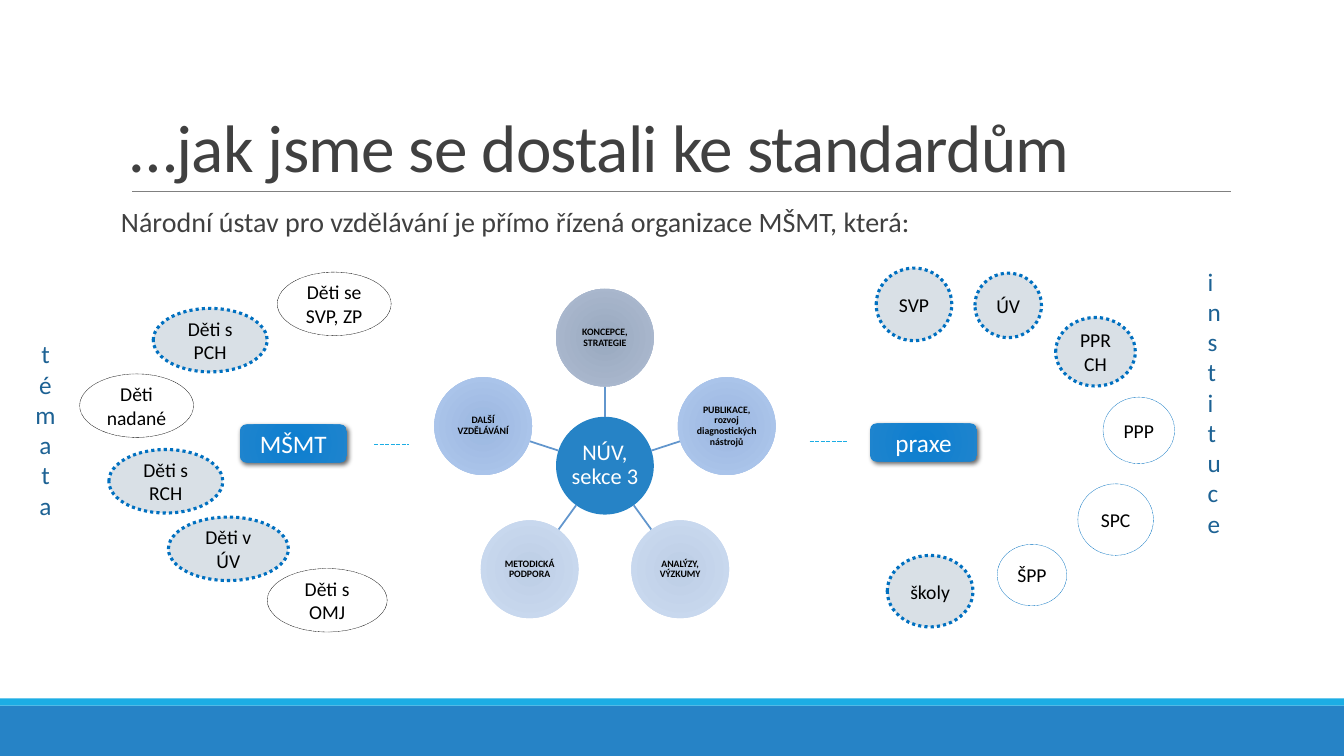
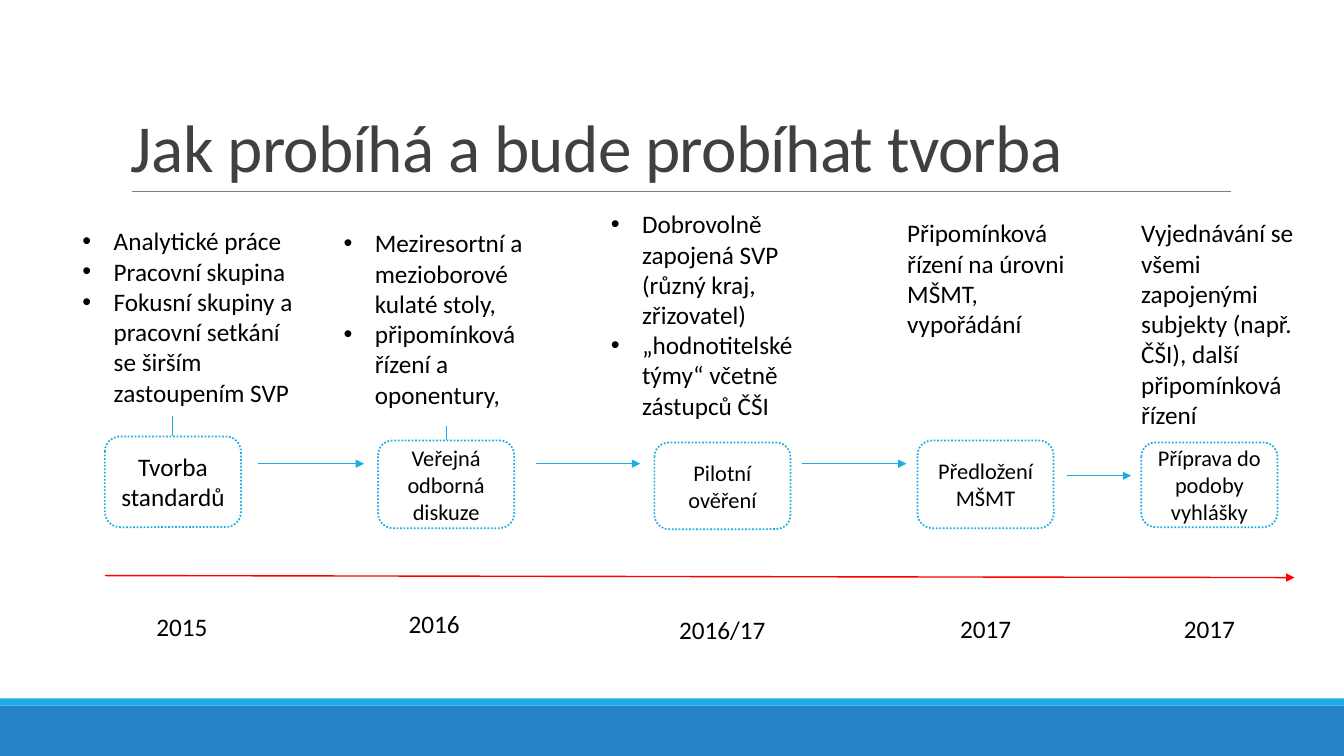
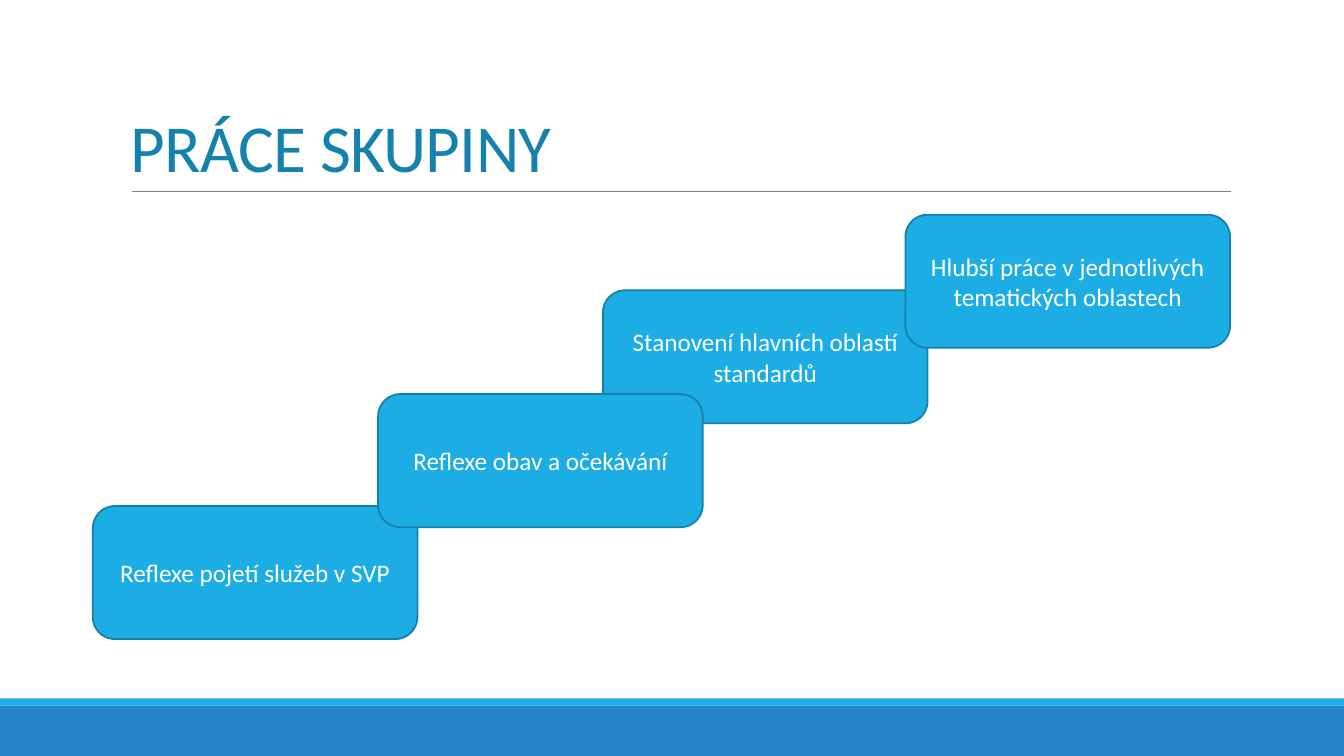
import math

from lxml import etree
from pptx import Presentation
from pptx import util as u
from pptx.dml.color import RGBColor
from pptx.enum import dml, shapes, text
from pptx.oxml.ns import qn

COLORS = {
    "white": "FFFFFF", "black": "000000", "title": "404040", "teal": "1482AC",
    "band": "2683C6", "sky": "1CADE4", "sky_edge": "1580A9", "rule": "808080",
    "blue": "0070C0", "mist": "D9E0E6", "spoke": "6296CD", "side": "1D6294",
    "red": "FF0000", "plate_in": "0D7ECF", "plate_out": "1E84CE",
    "steel_in": "98A8BF", "steel_out": "B0BDD2", "mid_in": "9BB7E0",
    "mid_out": "B1C9EE", "pale_in": "BDCEE5", "pale_out": "CDDCF2",
}
FONT = "Calibri"
OVAL = shapes.MSO_SHAPE.OVAL
ROUNDED = shapes.MSO_SHAPE.ROUNDED_RECTANGLE
RECTANGLE = shapes.MSO_SHAPE.RECTANGLE
TOP, MIDDLE, BOTTOM = text.MSO_ANCHOR.TOP, text.MSO_ANCHOR.MIDDLE, text.MSO_ANCHOR.BOTTOM
LEFT, CENTER = text.PP_ALIGN.LEFT, text.PP_ALIGN.CENTER
DOTS, DASHES = dml.MSO_LINE.ROUND_DOT, dml.MSO_LINE.SQUARE_DOT


def add_box(slide, preset, at, lines=(), size=18, color="black", fill=None,
            line=None, width=1.25, dash=None, align=CENTER, anchor=MIDDLE,
            margins=(0.1, 0.05), spacing=None, bold=False, bullet=False, wrap=True):
    """Add a preset shape, or a text box when preset is None.

    fill is a colour name, or a pair of names for a circular gradient.
    """
    box = [u.Inches(value) for value in at]
    if preset is None:
        shape = slide.shapes.add_textbox(*box)
    else:
        shape = slide.shapes.add_shape(preset, *box)
        shape.shadow.inherit = False
        if isinstance(fill, tuple):
            shape.fill.gradient()
            for stop, name in zip(shape.fill.gradient_stops, fill):
                stop.color.rgb = RGBColor.from_string(COLORS[name])
            gradient = shape._element.spPr.find(qn("a:gradFill"))
            gradient.remove(gradient.find(qn("a:lin")))
            circle = etree.SubElement(gradient, qn("a:path"), path="circle")
            etree.SubElement(circle, qn("a:fillToRect"),
                             l="100000", t="100000", r="100000", b="100000")
        else:
            shape.fill.solid()
            shape.fill.fore_color.rgb = RGBColor.from_string(COLORS[fill])
        if line:
            shape.line.color.rgb = RGBColor.from_string(COLORS[line])
            shape.line.width = u.Pt(width)
            if dash:
                shape.line.dash_style = dash
        else:
            shape.line.fill.background()
    frame = shape.text_frame
    frame.word_wrap = wrap
    frame.vertical_anchor = anchor
    frame.margin_left = frame.margin_right = u.Inches(margins[0])
    frame.margin_top = frame.margin_bottom = u.Inches(margins[1])
    for index, content in enumerate(lines):
        paragraph = frame.add_paragraph() if index else frame.paragraphs[0]
        paragraph.alignment = align
        if spacing:
            paragraph.line_spacing = spacing
        if bullet:
            properties = paragraph._p.get_or_add_pPr()
            properties.set("marL", str(u.Inches(0.31)))
            properties.set("indent", str(-u.Inches(0.31)))
            etree.SubElement(properties, qn("a:buFont"), typeface="Arial")
            etree.SubElement(properties, qn("a:buChar"), char="•")
        run = paragraph.add_run()
        run.text = content
        run.font.name = FONT
        run.font.size = u.Pt(size)
        run.font.bold = bold
        run.font.color.rgb = RGBColor.from_string(COLORS[color])
    return shape


def add_line(slide, start, end, color="sky", width=1, dash=None, arrow=False):
    points = [u.Inches(value) for value in (*start, *end)]
    connector = slide.shapes.add_connector(shapes.MSO_CONNECTOR.STRAIGHT, *points)
    connector.line.color.rgb = RGBColor.from_string(COLORS[color])
    connector.line.width = u.Pt(width)
    if dash:
        connector.line.dash_style = dash
    if arrow:
        etree.SubElement(connector.line._get_or_add_ln(), qn("a:tailEnd"), type="triangle")
    etree.SubElement(connector._element.spPr, qn("a:effectLst"))


presentation = Presentation()
presentation.slide_width = u.Inches(13.33)
presentation.slide_height = u.Inches(7.5)

# Shared bands, rule and title
slides = []
for title, color in [
    ("…jak jsme se dostali ke standardům", "title"),
    ("Jak probíhá a bude probíhat tvorba", "title"),
    ("PRÁCE SKUPINY", "teal"),
]:
    slide = presentation.slides.add_slide(presentation.slide_layouts[6])
    add_box(slide, RECTANGLE, (0, 7, 13.33, 0.5), fill="band")
    add_box(slide, RECTANGLE, (0, 6.93, 13.33, 0.07), fill="sky")
    add_line(slide, (1.31, 1.9), (12.21, 1.9), "rule", 0.5)
    heading = add_box(slide, None, (1.2, 0.31, 11, 1.59), [title], 48, color,
                      align=LEFT, anchor=BOTTOM, spacing=0.85)
    heading.text_frame.paragraphs[0].runs[0].font._element.set("spc", "-50")
    slides.append(slide)
network, timeline, stairs = slides

# Slide 1: hub with five activities, topics and institutions around it
add_box(network, None, (1.2, 2.02, 11, 0.5),
        ["Národní ústav pro vzdělávání je přímo řízená organizace MŠMT, která:"],
        20, "title", align=LEFT, anchor=TOP, margins=(0, 0.05), spacing=0.9)

HUB_X, HUB_Y, DIAMETER, ORBIT = 6, 4.62, 0.97, 1.27
activities = [
    ("KONCEPCE, STRATEGIE", "steel"),
    ("PUBLIKACE, rozvoj diagnostických nástrojů", "mid"),
    ("ANALÝZY, VÝZKUMY", "pale"),
    ("METODICKÁ PODPORA", "pale"),
    ("DALŠÍ VZDĚLÁVÁNÍ", "mid"),
]
add_box(network, OVAL, (HUB_X - DIAMETER / 2, HUB_Y - DIAMETER / 2, DIAMETER, DIAMETER),
        ["NÚV, sekce 3"], 16, "white", "band", margins=(0.01, 0.01), spacing=0.9)
for index, (label, tone) in enumerate(activities):
    angle = math.tau * index / len(activities)
    across, down = math.sin(angle), -math.cos(angle)
    near, far = DIAMETER / 2, ORBIT - DIAMETER / 2
    add_line(network, (HUB_X + near * across, HUB_Y + near * down),
             (HUB_X + far * across, HUB_Y + far * down), "spoke", 1.25)
    add_box(network, OVAL,
            (HUB_X + ORBIT * across - near, HUB_Y + ORBIT * down - near, DIAMETER, DIAMETER),
            [label], 7, fill=(tone + "_in", tone + "_out"), margins=(0, 0),
            spacing=0.9, bold=True)

for label, left, top in [("MŠMT", 2.38, 4.21), ("praxe", 8.63, 4.2)]:
    plate = add_box(network, ROUNDED, (left, top, 1.06, 0.38), [label], 18, "white",
                    ("plate_in", "plate_out"))
    effects = plate._element.spPr.find(qn("a:effectLst"))
    shadow = etree.SubElement(effects, qn("a:outerShdw"), blurRad=str(u.Pt(3.5)),
                              dist=str(u.Pt(2)), dir="2700000", rotWithShape="0")
    shade = etree.SubElement(shadow, qn("a:srgbClr"), val=COLORS["black"])
    etree.SubElement(shade, qn("a:alpha"), val="60000")
add_line(network, (3.71, 4.41), (4.06, 4.41), dash=DASHES)
add_line(network, (8.03, 4.38), (8.4, 4.38), dash=DASHES)

institutions = [
    ("SVP", (8.69, 2.66, 0.75, 0.72), True),
    ("ÚV", (9.67, 2.71, 0.66, 0.64), True),
    ("PPRCH", (10.47, 3.15, 0.79, 0.68), True),
    ("PPP", (10.94, 3.94, 0.71, 0.66), False),
    ("SPC", (10.69, 4.8, 0.75, 0.71), False),
    ("ŠPP", (9.89, 5.4, 0.69, 0.61), False),
    ("školy", (8.8, 5.51, 0.85, 0.71), True),
]
topics = [
    ("Děti se SVP, ZP", (2.75, 2.7, 1.13, 0.63), False),
    ("Děti s PCH", (1.52, 3.06, 1.13, 0.63), True),
    ("Děti nadané", (0.79, 3.71, 1.13, 0.63), False),
    ("Děti s RCH", (1.08, 4.46, 1.13, 0.63), True),
    ("Děti v ÚV", (1.67, 5.13, 1.19, 0.63), True),
    ("Děti s OMJ", (2.65, 5.64, 1.19, 0.63), False),
]
for group, plain_edge in [(institutions, "blue"), (topics, "black")]:
    for label, at, highlighted in group:
        add_box(network, OVAL, at, [label], 14,
                fill="mist" if highlighted else "white",
                line="blue" if highlighted else plain_edge,
                width=2.25 if highlighted else 0.25, dash=DOTS, margins=(0.09, 0.05))

for label, at, align, wrap in [
    ("témata", (0.17, 3.01, 0.56, 2.5), CENTER, True),
    ("instituce", (11.88, 2.59, 0.56, 3.33), LEFT, False),
]:
    caption = add_box(network, None, at, [label], 18, "side", align=align,
                      anchor=TOP, wrap=wrap)
    caption.text_frame._txBody.bodyPr.set("vert", "wordArtVert")

# Slide 2: steps with notes above and years below the time axis
steps = [
    ("Tvorba standardů", 18, (1.04, 4.33, 1.35, 0.9)),
    ("Veřejná odborná diskuze", 16, (3.75, 4.37, 1.35, 0.87)),
    ("Pilotní ověření", 16, (6.49, 4.39, 1.35, 0.86)),
    ("Předložení MŠMT", 16, (9.1, 4.37, 1.35, 0.87)),
    ("Příprava do podoby vyhlášky", 16, (11.32, 4.39, 1.35, 0.84)),
]
for label, size, at in steps:
    add_box(timeline, ROUNDED, at, [label], size, fill="white", line="sky", dash=DOTS)

notes = [
    ((0.72, 2.19, 2.33, 1.92), ["Analytické práce", "Pracovní skupina",
     "Fokusní skupiny a pracovní setkání se širším zastoupením SVP"]),
    ((3.31, 2.21, 2.31, 1.92), ["Meziresortní a mezioborové kulaté stoly,",
     "připomínková řízení a oponentury,"]),
    ((5.96, 2.02, 2.53, 2.22), ["Dobrovolně zapojená SVP (různý kraj, zřizovatel)",
     "„hodnotitelské týmy“ včetně zástupců ČŠI"]),
    ((8.9, 2.11, 1.76, 1.31), ["Připomínková řízení na úrovni MŠMT, vypořádání"]),
    ((11.22, 2.11, 1.76, 2.22),
     ["Vyjednávání se všemi zapojenými subjekty (např. ČŠI), další připomínková řízení"]),
]
for at, lines in notes:
    add_box(timeline, None, at, lines, align=LEFT, anchor=TOP, bullet=len(lines) > 1)

for start, end, level in [(2.56, 3.61, 4.6), (5.32, 6.35, 4.6), (7.95, 8.99, 4.6),
                          (10.58, 11.22, 4.72)]:
    add_line(timeline, (start, level), (end, level), arrow=True)
add_line(timeline, (1.71, 4.13), (1.71, 4.33))
add_line(timeline, (4.43, 4.23), (4.43, 4.37))
add_line(timeline, (1.04, 5.71), (12.84, 5.73), "red", arrow=True)

for year, left, top, width in [
    ("2015", 1.45, 6.02, 0.71), ("2016", 3.95, 5.99, 0.71), ("2016/17", 6.63, 6.05, 1.07),
    ("2017", 9.42, 6.04, 0.71), ("2017", 11.64, 6.04, 0.71),
]:
    add_box(timeline, None, (left, top, width, 0.4), [year], anchor=TOP, wrap=False)

# Slide 3: rising steps, the second one lying on top
for label, left, top in [
    ("Reflexe pojetí služeb v SVP", 0.92, 5.02),
    ("Stanovení hlavních oblastí standardů", 5.98, 2.88),
    ("Hlubší práce v jednotlivých tematických oblastech", 8.98, 2.13),
    ("Reflexe obav a očekávání", 3.75, 3.91),
]:
    add_box(stairs, ROUNDED, (left, top, 3.22, 1.32), [label], 18, "white", "sky", "sky_edge")

presentation.save("out.pptx")
